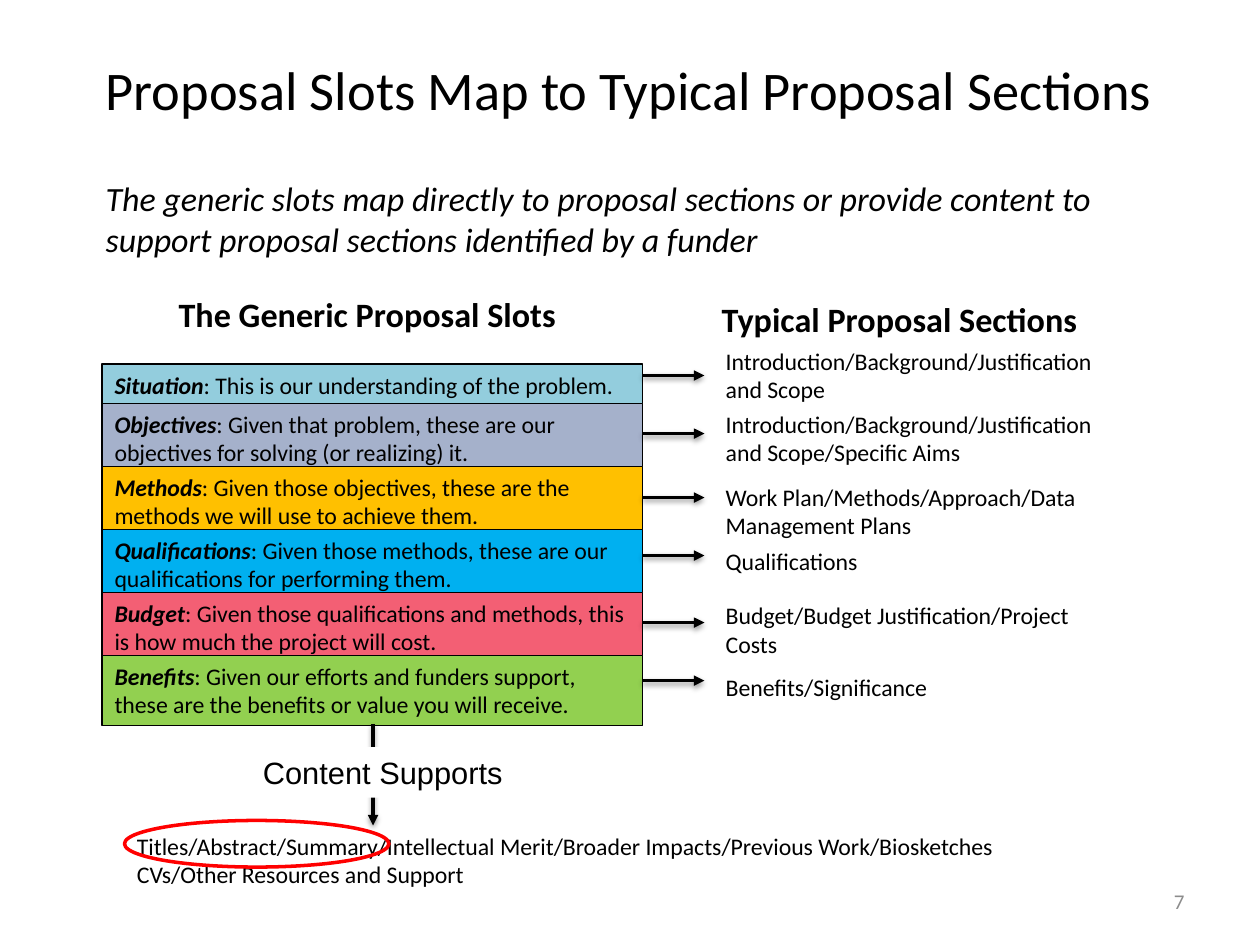
import pptx
import pptx.util
import pptx.dml.color
import pptx.enum.shapes
import pptx.enum.text
import pptx.oxml
import pptx.oxml.ns

Cm = pptx.util.Cm
Pt = pptx.util.Pt
SHAPE = pptx.enum.shapes.MSO_SHAPE
ANCHOR = pptx.enum.text.MSO_ANCHOR
ALIGN = pptx.enum.text.PP_ALIGN

COLORS = {
    "text": "000000",
    "number": "8C8C8C",
    "background": "FFFFFF",
    "circle": "FF0000",
    "situation": "93CDDD",
    "objectives": "A5B1CB",
    "methods": "FFC000",
    "qualifications": "00B0F0",
    "budget": "F35F74",
    "benefits": "92D050",
}
BODY_SIZE = 13.6
HEADING_SIZE = 19.5


def write_text(box, text, size, font="Calibri", color="text", align=ALIGN.LEFT,
               anchor=ANCHOR.TOP, bold=False, italic=False):
    frame = box.text_frame
    frame.word_wrap = True
    frame.vertical_anchor = anchor
    frame.text = text
    for para in frame.paragraphs:
        para.alignment = align
        for span in para.runs:
            span.font.name = font
            span.font.size = Pt(size)
            span.font.bold = bold
            span.font.italic = italic
            span.font.color.rgb = pptx.dml.color.RGBColor.from_string(COLORS[color])


def add_arrow(page, start_x, start_y, end_x, end_y):
    arrow = page.shapes.add_connector(
        pptx.enum.shapes.MSO_CONNECTOR.STRAIGHT,
        Cm(start_x), Cm(start_y), Cm(end_x), Cm(end_y))
    arrow.line.width = Pt(2)
    arrow.line.color.rgb = pptx.dml.color.RGBColor.from_string(COLORS["text"])
    namespace = pptx.oxml.ns.nsdecls("a")
    arrow.line._get_or_add_ln().append(
        pptx.oxml.parse_xml(f'<a:tailEnd {namespace} type="triangle"/>'))
    arrow._element.spPr.append(pptx.oxml.parse_xml(
        f'<a:effectLst {namespace}>'
        f'<a:outerShdw blurRad="{Pt(3.1)}" dist="{Pt(1.6)}" dir="5400000" rotWithShape="0">'
        f'<a:srgbClr val="{COLORS["text"]}"><a:alpha val="38000"/></a:srgbClr>'
        '</a:outerShdw></a:effectLst>'))


deck = pptx.Presentation()
deck.slide_width = Cm(25.4)
deck.slide_height = Cm(19.05)
page = deck.slides.add_slide(deck.slide_layouts[6])

title = page.shapes.add_textbox(Cm(1.57), Cm(0.25), Cm(22.2), Cm(3.07))
write_text(title, "Proposal Slots Map to Typical Proposal Sections", 31.1,
           align=ALIGN.CENTER, anchor=ANCHOR.MIDDLE)

number = page.shapes.add_textbox(Cm(18.21), Cm(17.65), Cm(5.92), Cm(1.02))
write_text(number, "7", 12, color="number", align=ALIGN.RIGHT, anchor=ANCHOR.MIDDLE)

intro = page.shapes.add_textbox(Cm(1.88), Cm(3.45), Cm(21.23), Cm(1.91))
write_text(intro, "The generic slots map directly to proposal sections or provide content to "
           "support proposal sections identified by a funder", 19.4,
           anchor=ANCHOR.MIDDLE, italic=True)

slots = [
    ("Situation", "This is our understanding of the problem."),
    ("Objectives", "Given that problem, these are our objectives for solving (or realizing) it."),
    ("Methods", "Given those objectives, these are the methods we will use to achieve them."),
    ("Qualifications", "Given those methods, these are our qualifications for performing them."),
    ("Budget", "Given those qualifications and methods, this is how much the project will cost."),
    ("Benefits", "Given our efforts and funders support, these are the benefits or value you will receive."),
]
for index, (name, description) in enumerate(slots):
    top, height = (8.13 + 1.27 * (index - 1), 1.42) if index else (7.34, 0.84)
    slot = page.shapes.add_shape(SHAPE.RECTANGLE, Cm(2.06), Cm(top), Cm(10.9), Cm(height))
    slot.shadow.inherit = False
    slot.fill.solid()
    slot.fill.fore_color.rgb = pptx.dml.color.RGBColor.from_string(COLORS[name.lower()])
    slot.line.color.rgb = pptx.dml.color.RGBColor.from_string(COLORS["text"])
    slot.line.width = Pt(0.75)
    write_text(slot, name, BODY_SIZE, bold=True, italic=True)
    span = slot.text_frame.paragraphs[0].add_run()
    span.text = f": {description}"
    span.font.name = "Calibri"
    span.font.size = Pt(BODY_SIZE)
    span.font.color.rgb = pptx.dml.color.RGBColor.from_string(COLORS["text"])

sections = [
    (6.86, 7.57, "Introduction/Background/Justification and Scope"),
    (8.13, 8.74, "Introduction/Background/Justification and Scope/Specific Aims"),
    (9.6, 10.03, "Work Plan/Methods/Approach/Data Management Plans"),
    (10.9, 11.2, "Qualifications"),
    (11.99, 12.55, "Budget/Budget Justification/Project Costs"),
    (13.44, 13.72, "Benefits/Significance"),
]
for top, arrow_y, text in sections:
    section = page.shapes.add_textbox(Cm(14.38), Cm(top), Cm(8.2), Cm(1.42))
    write_text(section, text, BODY_SIZE)
    add_arrow(page, 12.95, arrow_y, 14.2, arrow_y)

headings = [
    (3.35, 5.79, 8.15, "The Generic Proposal Slots"),
    (14.3, 5.89, 7.72, "Typical Proposal Sections"),
]
for left, top, width, text in headings:
    heading = page.shapes.add_textbox(Cm(left), Cm(top), Cm(width), Cm(1.09))
    write_text(heading, text, HEADING_SIZE, bold=True)

add_arrow(page, 7.52, 14.6, 7.52, 16.64)

supported = page.shapes.add_textbox(Cm(2.51), Cm(16.64), Cm(17.96), Cm(2))
write_text(supported, "Titles/Abstract/Summary/Intellectual Merit/Broader Impacts/Previous Work/Biosketches\n"
           "CVs/Other Resources and Support", BODY_SIZE)

label = page.shapes.add_shape(SHAPE.RECTANGLE, Cm(5.05), Cm(15.06), Cm(5.41), Cm(1.02))
label.shadow.inherit = False
label.fill.solid()
label.fill.fore_color.rgb = pptx.dml.color.RGBColor.from_string(COLORS["background"])
label.line.fill.background()
write_text(label, "Content Supports", 17.6, font="Arial", anchor=ANCHOR.MIDDLE)

circle = page.shapes.add_shape(SHAPE.OVAL, Cm(2.51), Cm(16.54), Cm(5.33), Cm(0.94))
circle.shadow.inherit = False
circle.fill.background()
circle.line.color.rgb = pptx.dml.color.RGBColor.from_string(COLORS["circle"])
circle.line.width = Pt(2)

deck.save("out.pptx")
